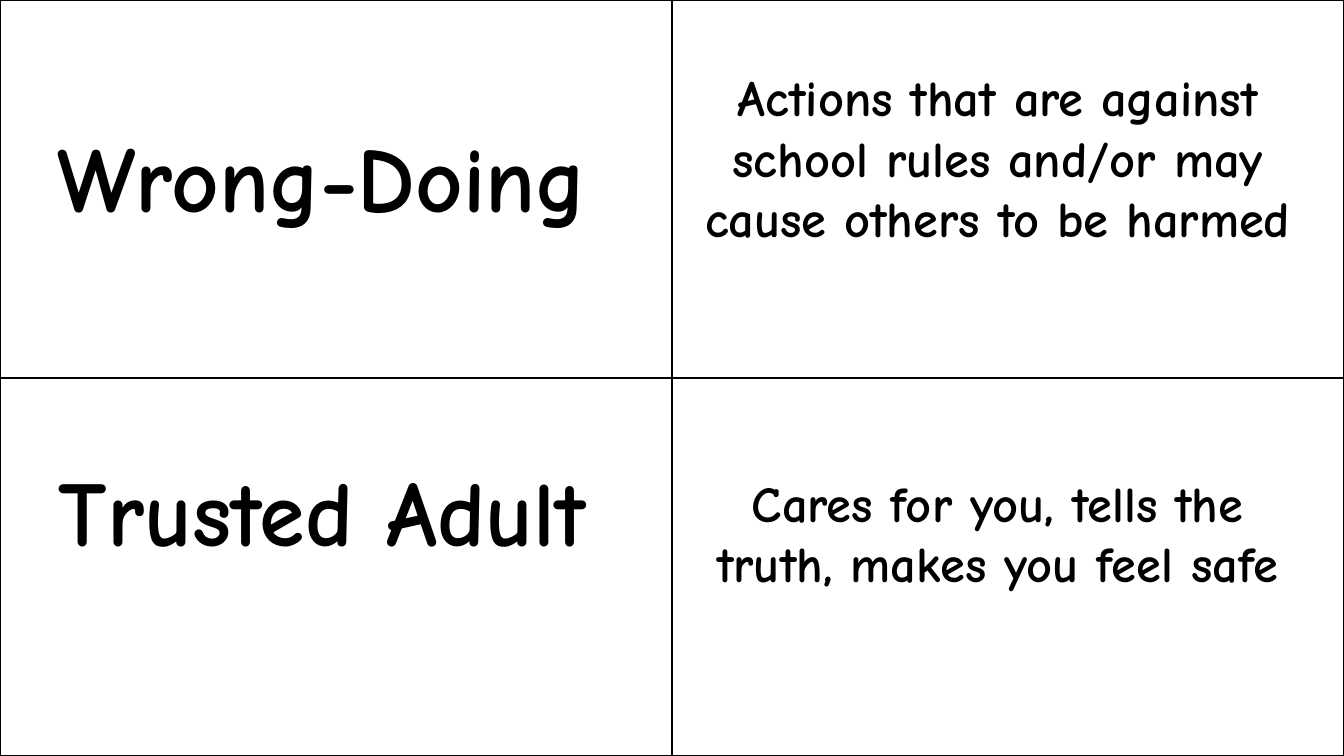
"""Build a slide of four vocabulary cards: terms on the left, meanings on the right."""
from dataclasses import dataclass

from pptx import Presentation
from pptx import util as u
from pptx.dml.color import RGBColor
from pptx.enum import shapes, text


@dataclass(frozen=True)
class Theme:
    font: str = "Comic Neue"
    ink: RGBColor = RGBColor(0, 0, 0)
    paper: RGBColor = RGBColor(255, 255, 255)
    border: float = 1
    sizes: tuple = (66, 36)


THEME = Theme()
SLIDE_WIDTH, SLIDE_HEIGHT = u.Inches(13.33), u.Inches(7.5)
COLUMNS, ROWS = 2, 2

# Each card: wording, then left, top, width, height in percent of the slide, from the card's corner.
CARDS = [
    [
        ("Wrong-Doing", (-1.05, 15.2, 50, 16.13)),
        ("Actions that are against school rules and/or may cause others to be harmed",
         (1.09, 8.13, 46.29, 33.6)),
    ],
    [
        ("Trusted Adult", (1.65, 9.47, 44.64, 30.93)),
        ("Cares for you, tells the truth, makes you feel safe",
         (1.09, 11.73, 46.29, 25.6)),
    ],
]


def place(left, top, width, height):
    return (int(SLIDE_WIDTH * left / 100), int(SLIDE_HEIGHT * top / 100),
            int(SLIDE_WIDTH * width / 100), int(SLIDE_HEIGHT * height / 100))


def add_card(slide, left, top):
    card = slide.shapes.add_shape(shapes.MSO_SHAPE.RECTANGLE,
                                  *place(left, top, 100 / COLUMNS, 100 / ROWS))
    card.shadow.inherit = False
    card.fill.solid()
    card.fill.fore_color.rgb = THEME.paper
    card.line.color.rgb = THEME.ink
    card.line.width = u.Pt(THEME.border)


def add_wording(slide, wording, box, size):
    frame = slide.shapes.add_textbox(*place(*box)).text_frame
    frame.word_wrap = True
    frame.auto_size = text.MSO_AUTO_SIZE.SHAPE_TO_FIT_TEXT
    paragraph = frame.paragraphs[0]
    paragraph.alignment = text.PP_ALIGN.CENTER
    run = paragraph.add_run()
    run.text = wording
    run.font.name = THEME.font
    run.font.size = u.Pt(size)
    run.font.bold = True
    run.font.color.rgb = THEME.ink


def main():
    presentation = Presentation()
    presentation.slide_width, presentation.slide_height = SLIDE_WIDTH, SLIDE_HEIGHT
    slide = presentation.slides.add_slide(presentation.slide_layouts[6])
    for row, cards in enumerate(CARDS):
        for column, (wording, (left, top, width, height)) in enumerate(cards):
            card_left, card_top = column * 100 / COLUMNS, row * 100 / ROWS
            add_card(slide, card_left, card_top)
            add_wording(slide, wording, (card_left + left, card_top + top, width, height),
                        THEME.sizes[column])
    presentation.save("out.pptx")


if __name__ == "__main__":
    main()
